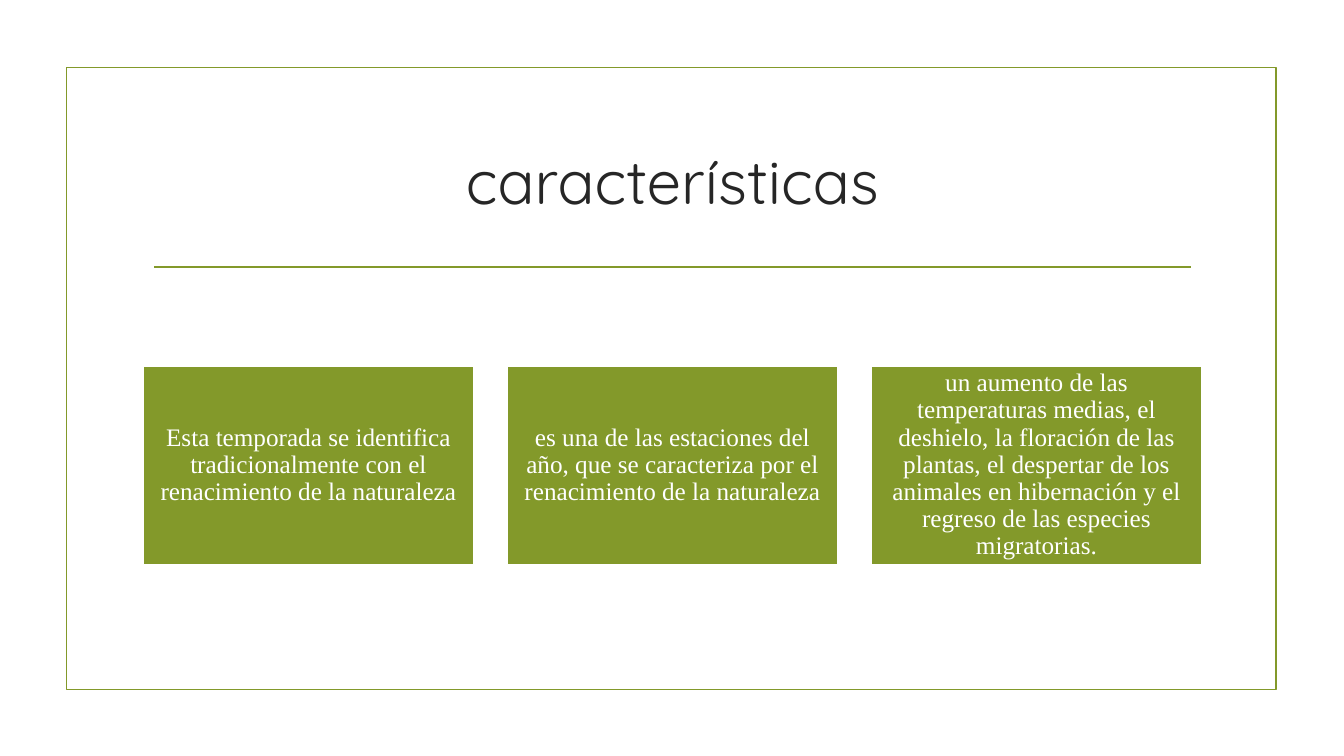
from pptx import Presentation
from pptx.dml.color import RGBColor
from pptx.enum.shapes import MSO_CONNECTOR as CONN, MSO_SHAPE as SHAPE
from pptx.enum.text import MSO_ANCHOR as ANCHOR, MSO_AUTO_SIZE as FIT, PP_ALIGN as ALIGN
from pptx.oxml.ns import qn
from pptx.util import Inches, Pt
from lxml import etree

GREEN, WHITE, DARK = "83992A", "FFFFFF", "262626"
CARD_LEFT, CARD_TOP, CARD_W, CARD_H, CARD_STEP = 1.42, 3.63, 3.28, 1.97, 3.61
CARDS = [
    "Esta temporada se identifica tradicionalmente con el renacimiento de la naturaleza",
    "es una de las estaciones del año, que se caracteriza por el renacimiento de la naturaleza",
    "un aumento de las temperaturas medias, el deshielo, la floración de las plantas, "
    "el despertar de los animales en hibernación y el regreso de las especies migratorias.",
]


def rgb(color):
    return RGBColor.from_string(color)


def set_attrs(obj, values):
    for name, value in values.items():
        setattr(obj, name, value)


def set_line(line, color):
    line.color.rgb = rgb(color)
    line.width = Pt(1.25)


def set_text(sp, text, font, size, color, inset, spacing):
    tf = sp.text_frame
    margins = ("margin_left", "margin_top", "margin_right", "margin_bottom")
    set_attrs(tf, dict.fromkeys(margins, Inches(inset)))
    set_attrs(tf, {"word_wrap": True, "auto_size": FIT.NONE,
                   "vertical_anchor": ANCHOR.MIDDLE})
    p = tf.paragraphs[0]
    set_attrs(p, {"alignment": ALIGN.CENTER, "line_spacing": spacing})
    r = p.add_run()
    r.text = text
    set_attrs(r.font, {"name": font, "size": Pt(size)})
    r.font.color.rgb = rgb(color)


def add_rect(s, left, top, width, height, line, fill=None):
    sp = s.shapes.add_shape(SHAPE.RECTANGLE, *map(Inches, (left, top, width, height)))
    sp.shadow.inherit = False
    if fill:
        sp.fill.solid()
        sp.fill.fore_color.rgb = rgb(fill)
    else:
        sp.fill.background()
    set_line(sp.line, line)
    return sp


def add_rule(s, x1, x2, y):
    rule = s.shapes.add_connector(CONN.STRAIGHT, *map(Inches, (x1, y, x2, y)))
    set_line(rule.line, GREEN)
    etree.SubElement(rule._element.spPr, qn("a:effectLst"))


def add_title(s, text):
    title = s.shapes.title
    set_attrs(title, {"left": Inches(1.42), "top": Inches(1.07),
                      "width": Inches(10.5), "height": Inches(1.43)})
    set_text(title, text, "Quicksand", 44, DARK, 0.05, 1.0)


def add_card(s, index, text):
    card = add_rect(s, CARD_LEFT + index * CARD_STEP, CARD_TOP, CARD_W, CARD_H, WHITE, GREEN)
    set_text(card, text, "Times New Roman", 18, WHITE, 0.07, 0.9)


def main():
    prs = Presentation()
    set_attrs(prs, {"slide_width": Inches(13.33), "slide_height": Inches(7.5)})
    s = prs.slides.add_slide(prs.slide_layouts[5])
    add_rect(s, 0.66, 0.67, 12, 6.17, GREEN)
    add_rule(s, 1.53, 11.81, 2.65)
    add_title(s, "características")
    for index, text in enumerate(CARDS):
        add_card(s, index, text)
    prs.save("out.pptx")


if __name__ == "__main__":
    main()
